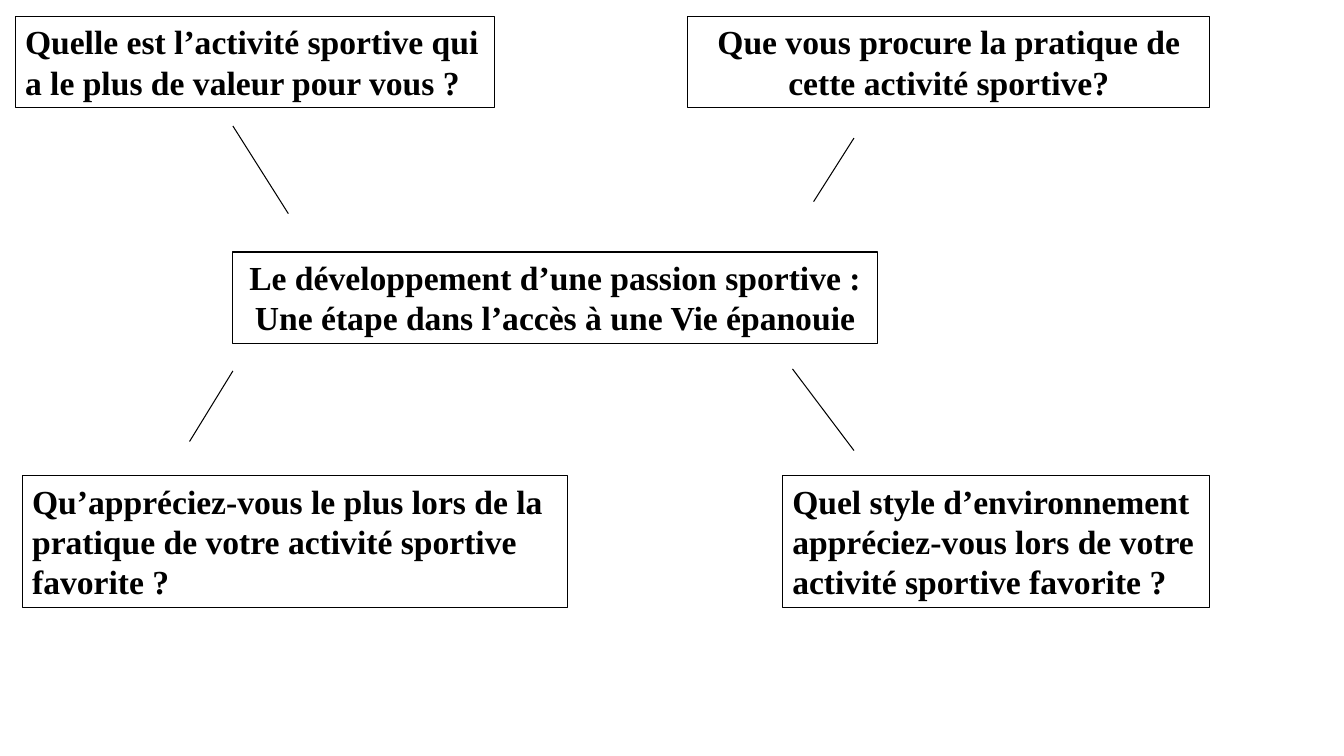
from pptx import Presentation
from pptx.dml.color import RGBColor
from pptx.enum.shapes import MSO_CONNECTOR, MSO_SHAPE
from pptx.enum.text import MSO_ANCHOR, MSO_AUTO_SIZE, PP_ALIGN
from pptx.oxml.ns import qn
from pptx.util import Inches, Pt
from lxml import etree

COLORS = {"ink": "000000"}
INK = RGBColor.from_string(COLORS["ink"])
FONT = {"name": "Times New Roman", "size": Pt(24), "bold": True}
FRAME = {
    "word_wrap": True,
    "auto_size": MSO_AUTO_SIZE.SHAPE_TO_FIT_TEXT,
    "vertical_anchor": MSO_ANCHOR.TOP,
}
LEFT, CENTER = PP_ALIGN.LEFT, PP_ALIGN.CENTER

prs = Presentation()
prs.slide_width, prs.slide_height = Inches(13.33), Inches(7.5)
s = prs.slides.add_slide(prs.slide_layouts[6])

boxes = [
    (0.15, 0.16, 4.76, 0.91, LEFT,
     ["Quelle est l’activité sportive qui a le plus de valeur pour vous ?"]),
    (6.82, 0.16, 5.18, 0.91, CENTER,
     ["Que vous procure la pratique de", "cette activité sportive?"]),
    (2.31, 2.5, 6.39, 0.91, CENTER,
     ["Le développement d’une passion sportive : Une étape dans l’accès à une Vie épanouie"]),
    (0.22, 4.72, 5.41, 1.31, LEFT,
     ["Qu’appréciez-vous le plus lors de la pratique de votre activité sportive favorite ?"]),
    (7.76, 4.72, 4.24, 1.31, LEFT,
     ["Quel style d’environnement appréciez-vous lors de votre activité sportive favorite ?"]),
]
for x, y, w, h, align, lines in boxes:
    sp = s.shapes.add_shape(MSO_SHAPE.RECTANGLE, *map(Inches, (x, y, w, h)))
    sp.shadow.inherit = False
    sp.fill.background()
    sp.line.color.rgb = INK
    sp.line.width = Pt(0.75)
    tf = sp.text_frame
    for key, value in FRAME.items():
        setattr(tf, key, value)
    for i, line in enumerate(lines):
        p = tf.paragraphs[0] if i == 0 else tf.add_paragraph()
        p.alignment = align
        r = p.add_run()
        r.text = line
        r.font.color.rgb = INK
        for key, value in FONT.items():
            setattr(r.font, key, value)

branches = [
    (2.31, 1.25, 2.86, 2.12),
    (8.47, 1.37, 8.07, 2),
    (2.31, 3.68, 1.88, 4.38),
    (7.86, 3.66, 8.47, 4.47),
]
for ends in branches:
    branch = s.shapes.add_connector(MSO_CONNECTOR.STRAIGHT, *map(Inches, ends))
    branch.line.color.rgb = INK
    branch.line.width = Pt(0.75)
    etree.SubElement(branch._element.spPr, qn("a:effectLst"))

prs.save("out.pptx")
